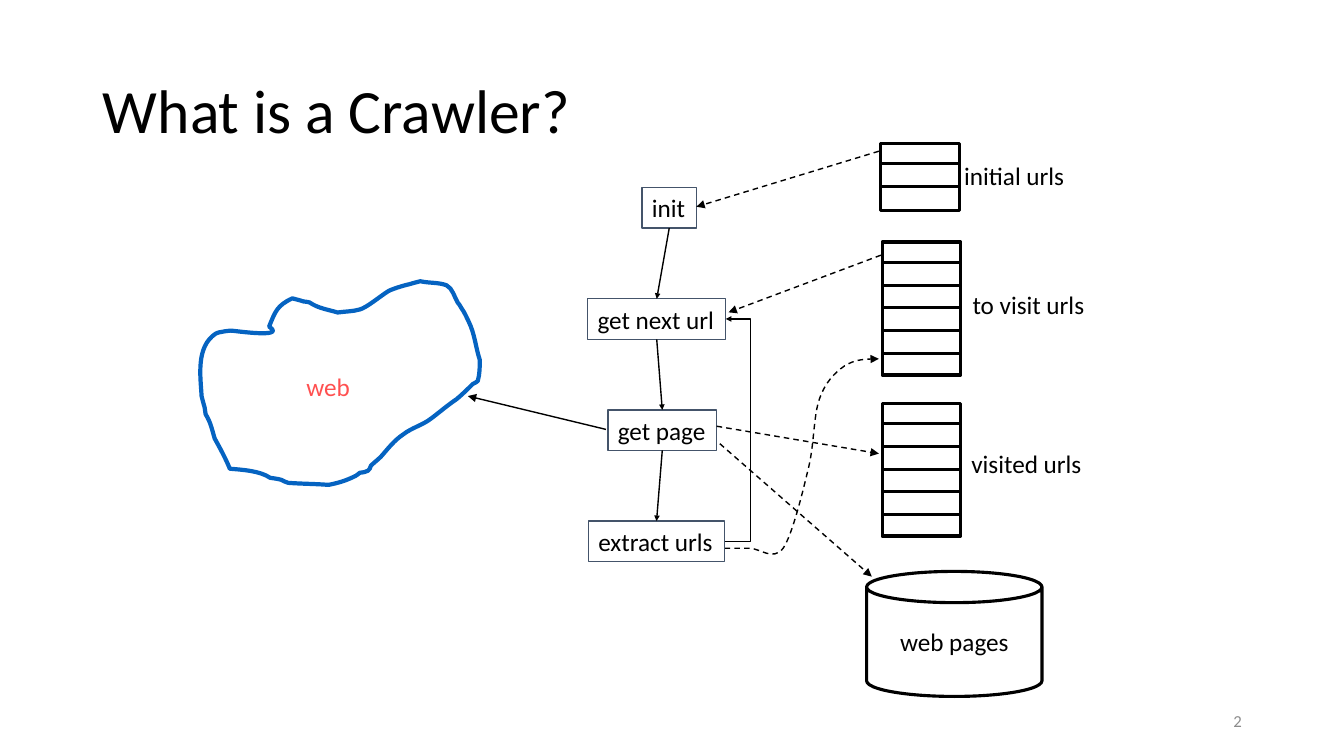
from lxml import etree
from pptx import Presentation
from pptx.dml.color import RGBColor
from pptx.enum.dml import MSO_LINE
from pptx.enum.shapes import MSO_CONNECTOR, MSO_SHAPE
from pptx.enum.text import MSO_ANCHOR, PP_ALIGN
from pptx.oxml.ns import qn
from pptx.util import Cm, Pt

RECT, CAN = MSO_SHAPE.RECTANGLE, MSO_SHAPE.CAN
LINE, ELBOW = MSO_CONNECTOR.STRAIGHT, MSO_CONNECTOR.ELBOW
LEFT, MID, RIGHT = PP_ALIGN.LEFT, PP_ALIGN.CENTER, PP_ALIGN.RIGHT
DASH, MIDDLE = MSO_LINE.DASH, MSO_ANCHOR.MIDDLE
BLACK = RGBColor(0x00, 0x00, 0x00)
BLUE = RGBColor(0x05, 0x63, 0xC1)
SLATE = RGBColor(0x44, 0x54, 0x6A)
RED = RGBColor(0xFF, 0x50, 0x50)
GREY = RGBColor(0x8C, 0x8C, 0x8C)
UNIT = Cm(0.0254)  # grid step of the curve points
BOTTOM, SIDE, TOP = 2, 3, 0  # connection sites of a box


def write(shape, text, size=18, color=BLACK, align=LEFT, wrap=False):
    frame = shape.text_frame
    frame.word_wrap = wrap
    frame.vertical_anchor = MIDDLE
    par = frame.paragraphs[0]
    par.alignment = align
    run = par.add_run()
    run.text = text
    for key, value in {"name": "Calibri", "size": Pt(size)}.items():
        setattr(run.font, key, value)
    run.font.color.rgb = color


def stroke(shape, color=BLACK, width=1, dash=None, head=None):
    """Style an outline without shadow; head is the arrowhead size."""
    shape.line.color.rgb = color
    shape.line.width = Pt(width)
    if dash:
        shape.line.dash_style = dash
    props = shape.element.spPr
    if head:
        etree.SubElement(props.find(qn("a:ln")), qn("a:tailEnd"),
                         type="triangle", w=head, len=head)
    etree.SubElement(props, qn("a:effectLst"))


prs = Presentation()
prs.slide_width, prs.slide_height = Cm(33.87), Cm(19.05)
slide = prs.slides.add_slide(prs.slide_layouts[5])
shapes = slide.shapes

title = shapes.title
place = {"left": 2.34, "top": 1.02, "width": 29.21, "height": 3.68}
for key, value in place.items():
    setattr(title, key, Cm(value))
write(title, "What is a Crawler?", 44, wrap=True)
title.text_frame.paragraphs[0].line_spacing = 0.9

# Curves: a start point, then two control points and an end point each
cloud = [
    (267, 324),
    (273, 309), (275, 303), (290, 296), (294, 297), (298, 298), (301, 299),
    (303, 299), (307, 300), (307, 300), (316, 306), (325, 307), (335, 310),
    (342, 309), (350, 309), (357, 307), (364, 305), (377, 294), (385, 289),
    (388, 287), (401, 283), (406, 282), (409, 281), (417, 279), (417, 279),
    (426, 281), (435, 280), (443, 283), (449, 286), (451, 295), (454, 300),
    (455, 302), (457, 303), (458, 306), (461, 310), (463, 315), (465, 319),
    (471, 331), (472, 345), (476, 357), (476, 364), (476, 371), (474, 378),
    (473, 379), (471, 380), (469, 381), (464, 386), (459, 391), (453, 396),
    (444, 402), (436, 409), (428, 415), (419, 422), (409, 424), (400, 431),
    (391, 437), (385, 445), (378, 453), (375, 456), (371, 459), (368, 462),
    (367, 464), (367, 466), (365, 467), (363, 468), (360, 469), (357, 469),
    (355, 470), (354, 472), (353, 472), (343, 477), (336, 479), (326, 481),
    (313, 480), (299, 480), (286, 479), (284, 479), (282, 477), (279, 476),
    (276, 475), (268, 474), (268, 474), (258, 467), (240, 466), (228, 465),
    (224, 455), (218, 444), (213, 435), (210, 425), (209, 419), (204, 411),
    (204, 409), (203, 406), (203, 404), (202, 401), (200, 393), (200, 393),
    (199, 374), (194, 344), (214, 331), (217, 329), (229, 328), (229, 328),
    (232, 328), (285, 336), (267, 324),
]
wave = [
    (719, 544),
    (727, 544), (735, 544), (744, 544), (754, 544), (767, 557), (777, 544),
    (786, 531), (796, 490), (802, 465), (808, 441), (807, 413), (813, 396),
    (819, 379), (828, 370), (838, 363), (848, 357), (860, 356), (872, 356),
]
curves = [
    (cloud, True, {"color": BLUE, "width": 3}),
    (wave, False, {"dash": DASH, "head": "med"}),
]
for points, closed, style in curves:
    pen = shapes.build_freeform(*points[0], scale=UNIT)
    pen.add_line_segments(points[1:], close=closed)
    curve = pen.convert_to_shape()
    curve.fill.background()
    stroke(curve, **style)
    track = curve.element.spPr.find(".//" + qn("a:path"))
    steps = track.findall(qn("a:lnTo"))
    for i in range(0, len(steps), 3):
        bend = etree.Element(qn("a:cubicBezTo"))
        steps[i].addprevious(bend)
        for step in steps[i:i + 3]:
            bend.append(step[0])
            track.remove(step)

# Url lists
for x, y, height, rows in [(22.2, 3.61, 1.7, 3), (22.23, 6.1, 3.35, 6),
                           (22.23, 10.16, 3.35, 6)]:
    stack = shapes.add_shape(RECT, Cm(x), Cm(y), Cm(1.98), Cm(height))
    stack.fill.background()
    stroke(stack, width=2.25)
    for row in range(rows - 1):
        level = Cm(y + 0.52 + 0.57 * row)
        rule = shapes.add_connector(LINE, Cm(x), level, Cm(x + 1.96), level)
        stroke(rule, width=2.25)

# Labels
for text, x, y, width, color in [
    ("web", 7.47, 9.22, 1.63, RED),
    ("initial urls", 24.05, 3.91, 3.05, BLACK),
    ("to visit urls", 24.26, 7.16, 3.33, BLACK),
    ("visited urls", 24.23, 11.18, 3.3, BLACK),
]:
    label = shapes.add_textbox(Cm(x), Cm(y), Cm(width), Cm(1.02))
    write(label, text, color=color)

# Crawl loop
boxes = []
for i, (text, x, width) in enumerate([
    ("init", 16.18, 1.37), ("get next url", 14.81, 3.48),
    ("get page", 15.32, 2.74), ("extract urls", 14.83, 3.43),
]):
    box = shapes.add_shape(RECT, Cm(x), Cm(4.73 + 2.8 * i), Cm(width), Cm(1.02))
    box.fill.background()
    stroke(box, SLATE)
    write(box, text)
    boxes.append(box)

links = [(LINE, a, BOTTOM, b, TOP) for a, b in zip(boxes, boxes[1:])]
links.append((ELBOW, boxes[3], SIDE, boxes[1], SIDE))
for kind, start, out, end, into in links:
    link = shapes.add_connector(kind, 0, 0, 0, 0)
    link.begin_connect(start, out)
    link.end_connect(end, into)
    stroke(link, head="sm")
    if kind == ELBOW:
        guides = link.element.spPr.find(".//" + qn("a:avLst"))
        etree.SubElement(guides, qn("a:gd"), name="adj1", fmla="val 2200000")

# Data flow
for x1, y1, x2, y2, dash in [
    (22.15, 3.81, 17.55, 5.21, DASH),
    (22.2, 6.43, 18.36, 7.87, DASH),
    (15.27, 10.82, 11.79, 9.98, None),
    (18.06, 10.74, 22.15, 11.43, DASH),
    (18.14, 11.18, 21.97, 14.53, DASH),
]:
    flow = shapes.add_connector(LINE, Cm(x1), Cm(y1), Cm(x2), Cm(y2))
    stroke(flow, dash=dash, head="med")

store = shapes.add_shape(CAN, Cm(21.84), Cm(14.4), Cm(4.42), Cm(3.15))
store.adjustments[0] = 0.25
store.fill.background()
stroke(store, width=2.25)
write(store, "web pages", align=MID)

number = shapes.add_textbox(Cm(23.93), Cm(17.65), Cm(7.62), Cm(1.02))
write(number, "2", 12, GREY, RIGHT, True)

prs.save("out.pptx")
